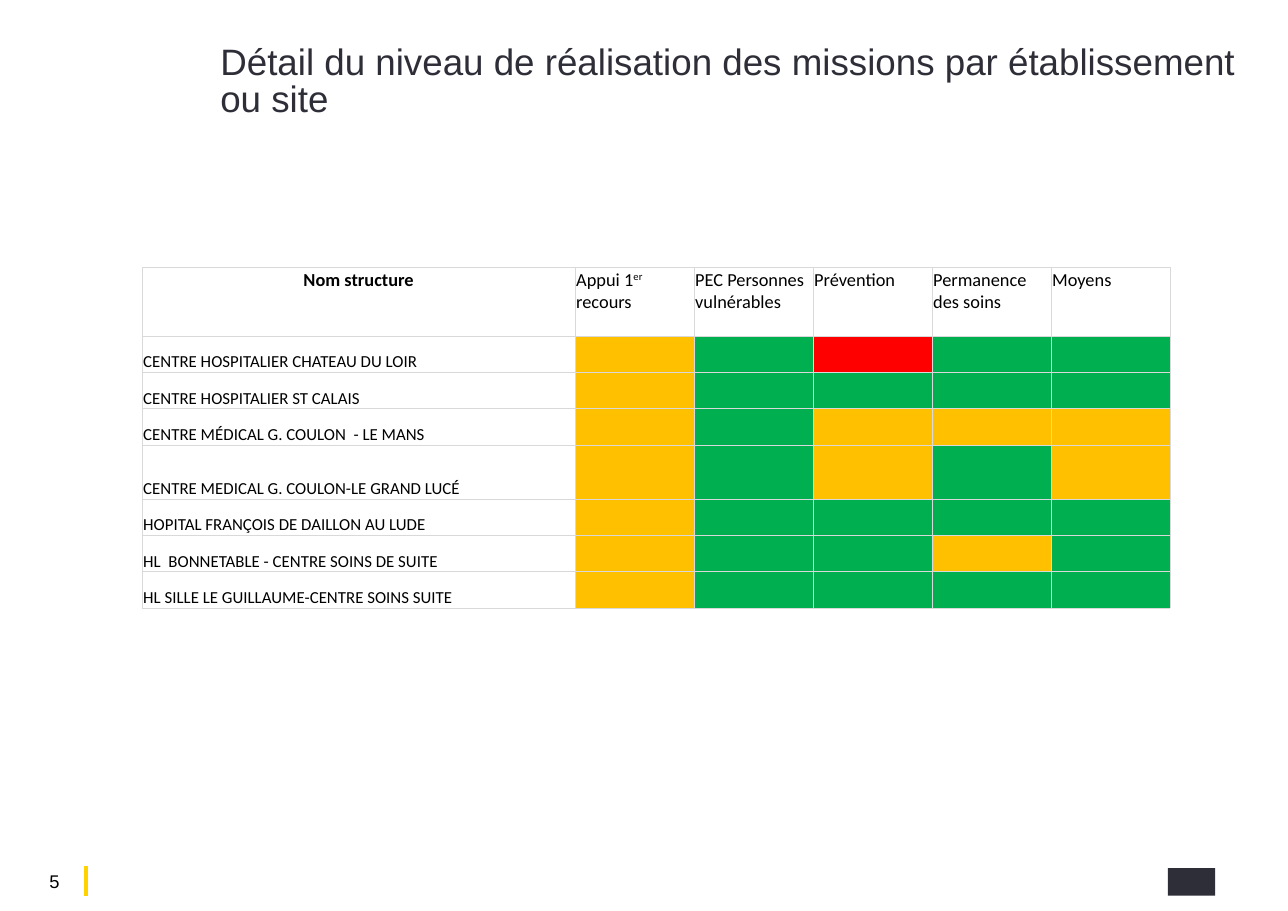
from pptx import Presentation
from pptx.dml.color import RGBColor
from pptx.enum.shapes import MSO_CONNECTOR as Link, MSO_SHAPE as Preset
from pptx.enum.text import MSO_ANCHOR as Anchor, PP_ALIGN as Align
from pptx.oxml import parse_xml
from pptx.oxml.ns import nsdecls
from pptx.util import Inches, Pt

THEME = {
    "ink": "2E2E38", "black": "000000", "white": "FFFFFF", "accent": "FFD200", "grid": "D9D9D9",
    "levels": {"V": "00B050", "O": "FFC000", "R": "FF0000"},
    "title": 24, "head": 12, "name": 11, "number": 12,
    "heading_font": "Arial", "table_font": "Calibri",
}


def color(code):
    return RGBColor.from_string(code)


def write(para, text, face, size, ink, bold=False):
    span = para.add_run()
    span.text = text
    span.font.color.rgb = color(ink)
    for key, value in {"name": face, "size": Pt(size), "bold": bold}.items():
        setattr(span.font, key, value)
    return span


deck = Presentation()
deck.slide_width, deck.slide_height = Inches(11.69), Inches(8.27)
page = deck.slides.add_slide(deck.slide_layouts[6])

# Title and page number
texts = [
    ("5", (0.25, 7.89, 0.49, 0.21), 0.04, Align.CENTER, THEME["number"], THEME["black"]),
    ("Détail du niveau de réalisation des missions par établissement ou site",
     (2, 0.41, 9.24, 0.58), 0, Align.LEFT, THEME["title"], THEME["ink"]),
]
for text, place, top, align, size, ink in texts:
    frame = page.shapes.add_textbox(*map(Inches, place)).text_frame
    margins = {"margin_left": 0, "margin_top": Inches(top), "margin_right": 0, "margin_bottom": 0}
    for key, value in {**margins, "word_wrap": True, "vertical_anchor": Anchor.TOP}.items():
        setattr(frame, key, value)
    para = frame.paragraphs[0]
    para.alignment, para.line_spacing = align, 0.85
    write(para, text, THEME["heading_font"], size, ink)

# Footer rule
rule = page.shapes.add_connector(Link.STRAIGHT, *map(Inches, (0.78, 7.86, 0.78, 8.13)))
rule.line.color.rgb, rule.line.width = color(THEME["accent"]), Pt(3)
rule._element.spPr.append(parse_xml(f"<a:effectLst {nsdecls('a')}/>"))

# Plain block in the footer corner
block = page.shapes.add_shape(Preset.RECTANGLE, *map(Inches, (10.6, 7.88, 0.43, 0.25)))
block.shadow.inherit = False
block.fill.solid()
block.fill.fore_color.rgb = color(THEME["ink"])
block.line.fill.background()

# Table content: one letter per mission (V achieved, O partial, R not achieved)
heads = ["Nom structure", "Appui 1^er^ recours", "PEC Personnes vulnérables",
         "Prévention", "Permanence des soins", "Moyens"]
sites = [
    ("CENTRE HOSPITALIER CHATEAU DU LOIR", "OVRVV"),
    ("CENTRE HOSPITALIER ST CALAIS", "OVVVV"),
    ("CENTRE MÉDICAL G. COULON  - LE MANS", "OVOOO"),
    ("CENTRE MEDICAL G. COULON-LE GRAND LUCÉ", "OVOVO"),
    ("HOPITAL FRANÇOIS DE DAILLON AU LUDE", "OVVVV"),
    ("HL  BONNETABLE - CENTRE SOINS DE SUITE", "OVVOV"),
    ("HL SILLE LE GUILLAUME-CENTRE SOINS SUITE", "OVVVV"),
]
widths = [3.93] + [1.08] * 5
heights = [0.62] + [0.33] * 3 + [0.49] + [0.33] * 3

# Table grid
table = page.shapes.add_table(len(heights), len(widths), Inches(1.29), Inches(2.43),
                              Inches(sum(widths)), Inches(sum(heights))).table
table.first_row = table.horz_banding = False
for column, width in zip(table.columns, widths):
    column.width = Inches(width)
for row, height in zip(table.rows, heights):
    row.height = Inches(height)

# Cell borders, fills and text
for r, row in enumerate(table.rows):
    for c, cell in enumerate(row.cells):
        for key in ("margin_left", "margin_top", "margin_right"):
            setattr(cell, key, Inches(0.01))
        cell.margin_bottom = 0
        for side in "LRTB":
            cell._tc.get_or_add_tcPr().append(parse_xml(
                f'<a:ln{side} {nsdecls("a")} w="{Pt(0.5)}"><a:solidFill>'
                f'<a:srgbClr val="{THEME["grid"]}"/></a:solidFill></a:ln{side}>'))
        is_level = r > 0 and c > 0
        cell.fill.solid()
        cell.fill.fore_color.rgb = color(
            THEME["levels"][sites[r - 1][1][c - 1]] if is_level else THEME["white"])
        if is_level:
            continue
        para = cell.text_frame.paragraphs[0]
        if r == 0:
            para.alignment = Align.LEFT if c else Align.CENTER
            for i, part in enumerate(heads[c].split("^")):
                span = write(para, part, THEME["table_font"], THEME["head"], THEME["black"], c == 0)
                if i == 1:  # superscript
                    span._r.get_or_add_rPr().set("baseline", "30000")
        else:
            cell.vertical_anchor = Anchor.BOTTOM
            write(para, sites[r - 1][0], THEME["table_font"], THEME["name"], THEME["black"])

deck.save("out.pptx")
